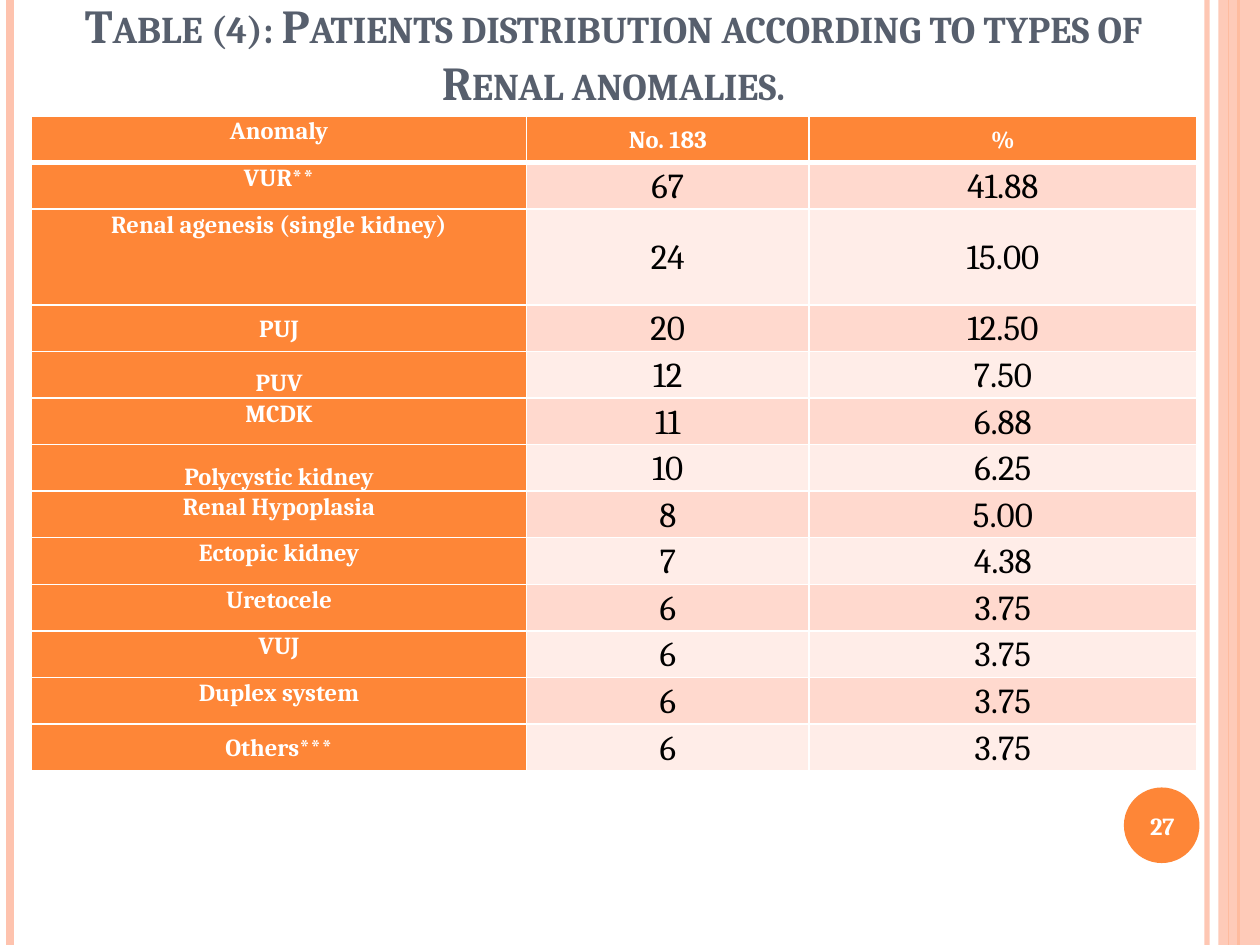
from lxml import etree
from pptx import Presentation
from pptx import util as u
from pptx.dml.color import RGBColor
from pptx.enum import shapes, text
from pptx.oxml.ns import qn

ORANGE, PEACH, WHITE = "FE8637", "FEC3AE", "FFFFFF"
BANDS = ["FFD9CE", "FFEDE8"]
TITLE = "Table (4): Patients distribution according to types of Renal anomalies."
PAGE = "27"
STRIPES = [(9.58, PEACH, 3, 93), (0.08, PEACH, 4.5, 100),
           (9.83, ORANGE, 1.5, 100), (9.75, ORANGE, 0.75, 100)]
TOP, MIDDLE, BOTTOM = (text.MSO_ANCHOR.TOP, text.MSO_ANCHOR.MIDDLE,
                       text.MSO_ANCHOR.BOTTOM)
ANOMALIES = [
    ("Anomaly", "No. 183", "%", TOP),
    ("VUR**", "67", "41.88", TOP),
    ("Renal agenesis (single kidney)", "24", "15.00", TOP),
    ("PUJ", "20", "12.50", MIDDLE),
    ("PUV", "12", "7.50", BOTTOM),
    ("MCDK", "11", "6.88", TOP),
    ("Polycystic kidney", "10", "6.25", BOTTOM),
    ("Renal Hypoplasia", "8", "5.00", TOP),
    ("Ectopic kidney", "7", "4.38", TOP),
    ("Uretocele", "6", "3.75", TOP),
    ("VUJ", "6", "3.75", TOP),
    ("Duplex system", "6", "3.75", TOP),
    ("Others***", "6", "3.75", MIDDLE),
]
COLUMN_WIDTHS = [3.93, 2.24, 3.08]
ROW_HEIGHT, TALL_ROW, TALL_HEIGHT = 0.37, 2, 0.76
LABEL = {"size": u.Pt(14), "bold": True}
FIGURE = {"size": u.Pt(20), "bold": False}
CELL_MARGINS = {"margin_left": u.Inches(0.07), "margin_right": u.Inches(0.07),
                "margin_top": 0, "margin_bottom": 0}
TITLE_FRAME = {"word_wrap": True, "auto_size": text.MSO_AUTO_SIZE.NONE,
               "vertical_anchor": BOTTOM, "margin_top": 0,
               "margin_bottom": u.Inches(0.46)}


def apply(target, values):
    for name, value in values.items():
        setattr(target, name, value)


def paint(color_format, color):
    color_format.rgb = RGBColor.from_string(color)


def fill(target, color):
    target.fill.solid()
    paint(target.fill.fore_color, color)


def fade(shape, percent):
    if percent < 100:
        color = next(shape.element.iter(qn("a:srgbClr")))
        etree.SubElement(color, qn("a:alpha"), val=str(percent * 1000))


def write(paragraph, words, color, font):
    run = paragraph.add_run()
    run.text = words
    paragraph.alignment = text.PP_ALIGN.CENTER
    apply(run.font, {"name": "Cambria", **font})
    paint(run.font.color, color)
    return run


def add_stripe(slide, x, color, weight, opacity):
    stripe = slide.shapes.add_connector(
        shapes.MSO_CONNECTOR.STRAIGHT, u.Inches(x), 0, u.Inches(x), u.Inches(7.5))
    paint(stripe.line.color, color)
    stripe.line.width = u.Pt(weight)
    fade(stripe, opacity)
    etree.SubElement(stripe.element.spPr, qn("a:effectLst"))


def add_solid(slide, kind, box, color, opacity=100):
    solid = slide.shapes.add_shape(kind, *map(u.Inches, box))
    solid.shadow.inherit = False
    fill(solid, color)
    solid.line.fill.background()
    fade(solid, opacity)


def add_borders(cell, weights):
    properties = cell._tc.get_or_add_tcPr()
    for side, weight in weights.items():
        border = etree.SubElement(properties, qn(f"a:ln{side}"), w=str(u.Pt(weight)))
        solid = etree.SubElement(border, qn("a:solidFill"))
        etree.SubElement(solid, qn("a:srgbClr"), val=WHITE)


def add_anomalies(slide):
    table = slide.shapes.add_table(
        len(ANOMALIES), len(COLUMN_WIDTHS), u.Inches(0.25), u.Inches(0.92),
        u.Inches(9.25), u.Inches(5.2)).table
    for column, width in zip(table.columns, COLUMN_WIDTHS):
        column.width = u.Inches(width)
    for r, (*values, label_anchor) in enumerate(ANOMALIES):
        table.rows[r].height = u.Inches(TALL_HEIGHT if r == TALL_ROW else ROW_HEIGHT)
        for c, value in enumerate(values):
            cell = table.cell(r, c)
            heading = r == 0 or c == 0
            apply(cell, {**CELL_MARGINS,
                         "vertical_anchor": label_anchor if c == 0 else MIDDLE})
            add_borders(cell, {"L": 1, "R": 1, "T": 3 if r == 1 else 1,
                               "B": 3 if r == 0 else 1})
            fill(cell, ORANGE if heading else BANDS[(r - 1) % 2])
            entry = cell.text_frame.paragraphs[0]
            entry.line_spacing = 1.07
            write(entry, value, WHITE if heading else "000000",
                  LABEL if heading else FIGURE)


def main():
    deck = Presentation()
    apply(deck, {"slide_width": u.Inches(10), "slide_height": u.Inches(7.5)})
    slide = deck.slides.add_slide(deck.slide_layouts[5])

    for stripe in STRIPES:
        add_stripe(slide, *stripe)
    add_solid(slide, shapes.MSO_SHAPE.RECTANGLE, (9.67, 0, 0.33, 7.5), PEACH, 87)
    add_solid(slide, shapes.MSO_SHAPE.OVAL, (8.92, 6.25, 0.6, 0.6), ORANGE)

    title = slide.shapes.title
    apply(title, {"left": u.Inches(0.33), "top": 0,
                  "width": u.Inches(9.08), "height": u.Inches(1.33)})
    apply(title.text_frame, TITLE_FRAME)
    heading = write(title.text_frame.paragraphs[0], TITLE, "575F6D",
                    {"size": u.Pt(27), "bold": True})
    heading.font._element.set("cap", "small")

    page = slide.shapes.add_textbox(*map(u.Inches, (8.89, 6.27, 0.67, 0.57)))
    apply(page.text_frame, {"word_wrap": True, "vertical_anchor": MIDDLE})
    write(page.text_frame.paragraphs[0], PAGE, WHITE, LABEL)

    add_anomalies(slide)
    deck.save("out.pptx")


if __name__ == "__main__":
    main()
